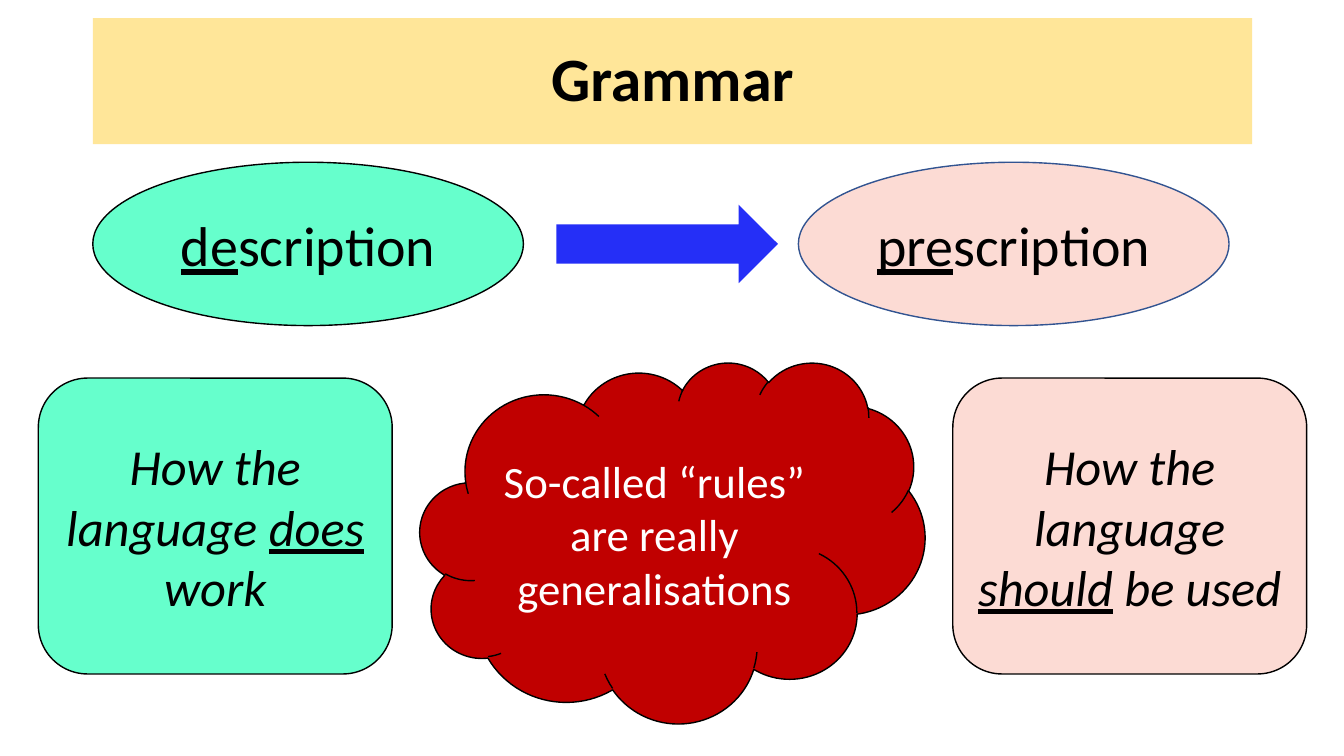
from dataclasses import dataclass
from pptx import Presentation
from pptx.dml.color import RGBColor
from pptx.enum.shapes import MSO_SHAPE
from pptx.enum.text import MSO_ANCHOR, PP_ALIGN
from pptx.util import Inches, Pt


@dataclass(frozen=True)
class Theme:
    """Colours, font and type sizes of the slide."""
    font: str = "Calibri"
    black: str = "000000"
    white: str = "FFFFFF"
    banner: str = "FFE699"
    mint: str = "66FFCC"
    pink: str = "FCDBD4"
    blue: str = "252FF7"
    navy: str = "325491"
    red: str = "C00000"
    title: int = 44
    term: int = 40
    meaning: int = 36
    note: int = 32


T = Theme()
W, H = 13.33, 7.5


def rgb(value):
    """Turn a hex string into a colour."""
    return RGBColor.from_string(value)


def place(sp, box):
    """Move a shape to a box of left, top, width and height in inches."""
    for name, value in zip(("left", "top", "width", "height"), box):
        setattr(sp, name, Inches(value))


def paint(sp, fill, line=None):
    """Give a shape its fill and its outline, if any."""
    sp.fill.solid()
    sp.fill.fore_color.rgb = rgb(fill)
    if line:
        sp.line.color.rgb = rgb(line)
        sp.line.width = Pt(1)
    else:
        sp.line.fill.background()


def write(sp, text, size, color=T.black, **style):
    """Write centred text, underlining what stands between underscores."""
    tf = sp.text_frame
    tf.word_wrap = True
    tf.vertical_anchor = MSO_ANCHOR.MIDDLE
    p = tf.paragraphs[0]
    p.alignment = PP_ALIGN.CENTER
    for i, part in enumerate(text.split("_")):
        if part:
            r = p.add_run()
            r.text = part
            fmt = {"name": T.font, "size": Pt(size), "underline": i % 2 == 1, **style}
            for name, value in fmt.items():
                setattr(r.font, name, value)
            r.font.color.rgb = rgb(color)
    return p


def add_shape(s, kind, box, fill, line=None):
    """Add a flat preset shape in a box."""
    sp = s.shapes.add_shape(kind, *map(Inches, box))
    sp.shadow.inherit = False
    paint(sp, fill, line)
    return sp


def add_banner(s, box):
    """Format the title placeholder as a filled banner."""
    sp = s.shapes.title
    place(sp, box)
    paint(sp, T.banner)
    write(sp, "Grammar", T.title, bold=True).line_spacing = 0.9


def add_terms(s, box):
    """Set two ellipses at the ends of a box, with an arrow between them."""
    x, y, w, h = box
    oval_w = 0.379 * w
    terms = (("_de_scription", x, T.mint, T.black),
             ("_pre_scription", x + w - oval_w, T.pink, T.navy))
    for text, left, fill, line in terms:
        sp = add_shape(s, MSO_SHAPE.OVAL, (left, y, oval_w, h), fill, line)
        write(sp, text, T.term)
    arrow_h = 0.48 * h
    arrow = (x + 0.408 * w, y + (h - arrow_h) / 2, 0.195 * w, arrow_h)
    add_shape(s, MSO_SHAPE.RIGHT_ARROW, arrow, T.blue)


def add_meanings(s, box):
    """Set two rounded cards at the ends of a box, with a cloud between them."""
    x, y, w, h = box
    card_w, card_h = 0.279 * w, 0.82 * h
    cards = (("How the language _does_ work", x, T.mint),
             ("How the language _should_ be used", x + w - card_w, T.pink))
    for text, left, fill in cards:
        card = (left, y + 0.045 * h, card_w, card_h)
        sp = add_shape(s, MSO_SHAPE.ROUNDED_RECTANGLE, card, fill, T.black)
        write(sp, text, T.meaning, italic=True)
    cloud_w = 0.398 * w
    cloud = (x + (w - cloud_w) / 2, y, cloud_w, h)
    sp = add_shape(s, MSO_SHAPE.CLOUD, cloud, T.red, T.black)
    write(sp, "So-called “rules” are really generalisations", T.note, T.white)


def main():
    """Build the slide and save it."""
    prs = Presentation()
    prs.slide_width, prs.slide_height = Inches(W), Inches(H)
    s = prs.slides.add_slide(prs.slide_layouts[5])
    margin = 0.92
    add_banner(s, (margin, 0.18, W - 2 * margin + 0.01, H / 6))
    add_terms(s, (margin, 1.61, 11.27, 1.62))
    add_meanings(s, (0.38, 3.59, 12.58, 3.58))
    prs.save("out.pptx")


if __name__ == "__main__":
    main()
